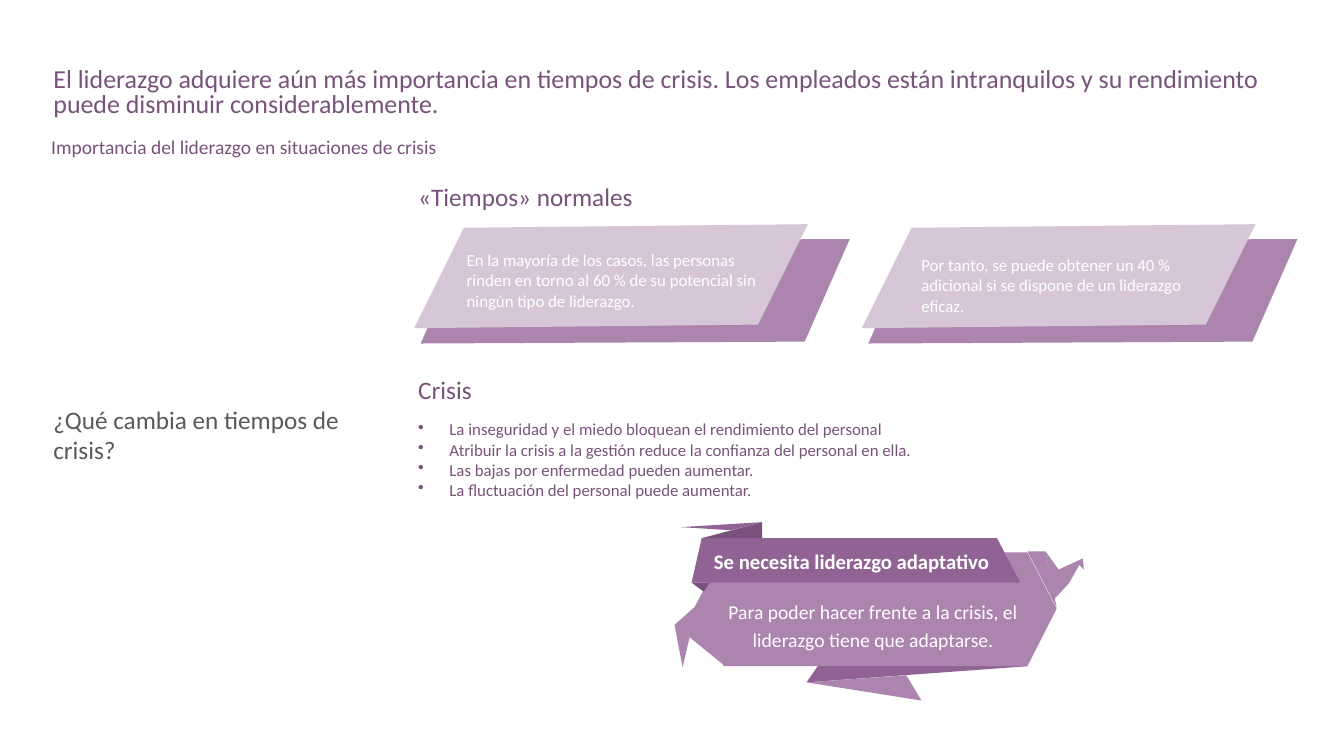
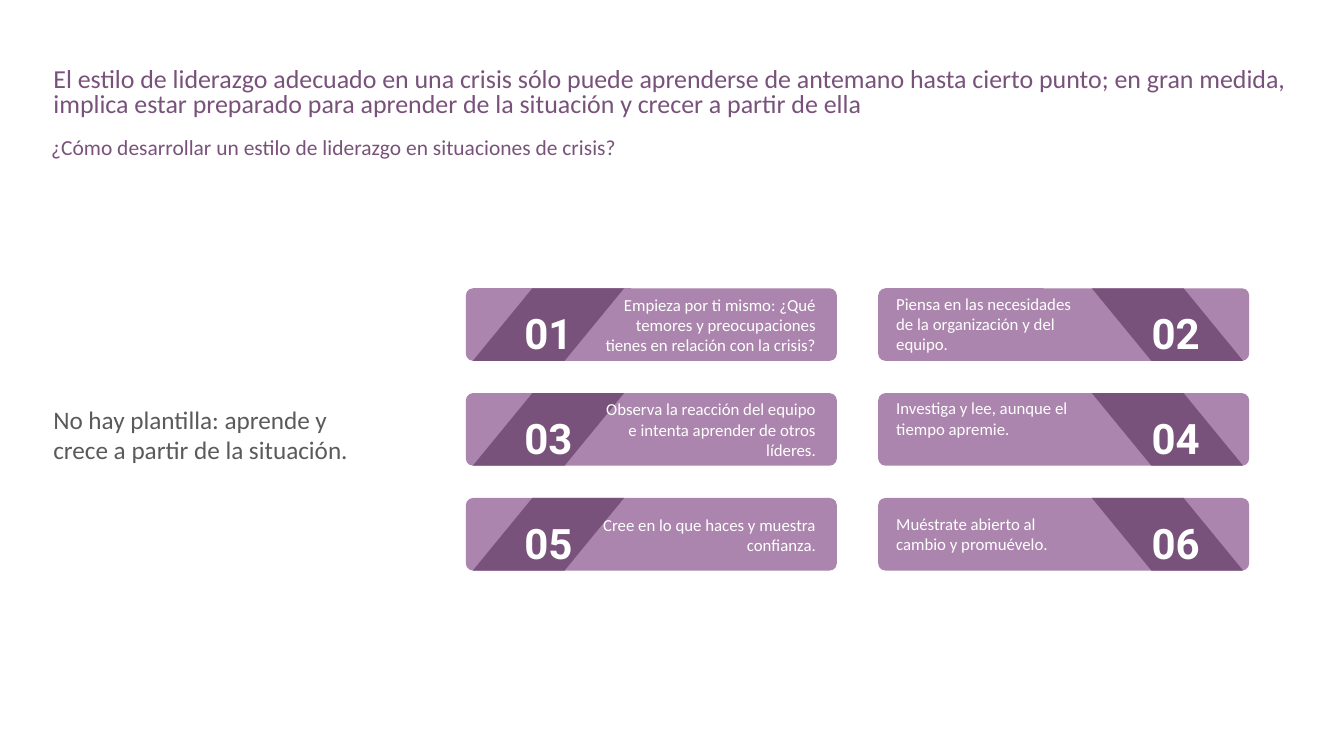
from dataclasses import dataclass

from lxml import etree
from pptx import Presentation
from pptx.dml.color import RGBColor
from pptx.enum import shapes, text
from pptx.oxml import ns
from pptx.util import Inches, Pt


@dataclass(frozen=True)
class Theme:
    """Colours, fonts and type sizes of the deck."""
    dark: str = "79527B"
    deep: str = "916395"
    mid: str = "AB85AD"
    pale: str = "D7C6D8"
    grey: str = "595A59"
    white: str = "FFFFFF"
    font: str = "Calibri"
    number_font: str = "Roboto"
    title: float = 18.5
    heading: float = 18
    banner: float = 14.8
    message: float = 14
    body: float = 12
    number: float = 30


T = Theme()
LEFT, CENTER, RIGHT = text.PP_ALIGN.LEFT, text.PP_ALIGN.CENTER, text.PP_ALIGN.RIGHT
TOP, MIDDLE = text.MSO_ANCHOR.TOP, text.MSO_ANCHOR.MIDDLE
PARALLELOGRAM = shapes.MSO_SHAPE.PARALLELOGRAM
ROUNDED = shapes.MSO_SHAPE.ROUNDED_RECTANGLE

RIBBON = [
    (T.mid, [(2.3, 1.52), (2.45, 1.77), (1.31, 1.59)]),
    (T.deep, [(3.5, 1.43), (1.42, 1.43), (1.31, 1.59)]),
    (T.mid, [(0.49, 1.43), (0.19, 0.86), (0.49, 0.3), (3.5, 0.3), (3.79, 0.86), (3.5, 1.43)]),
    (T.mid, [(3.79, 0.85), (3.5, 0.29), (3.68, 0.29)]),
    (T.mid, [(3.77, 0.76), (3.91, 0.61), (3.68, 0.29)]),
    (T.mid, [(3.91, 0.61), (4.05, 0.36), (3.81, 0.47)]),
    (T.mid, [(4.05, 0.36), (4.06, 0.47), (4.01, 0.42)]),
    (T.mid, [(0.19, 0.85), (0.49, 1.42), (0, 1.02)]),
    (T.mid, [(0, 1.02), (0.08, 1.44), (0.15, 1.14)]),
    (T.deep, [(3.43, 0.6), (0.17, 0.6), (0.27, 0.16), (3.2, 0.16)]),
    (T.dark, [(0.17, 0.6), (0.29, 0.69), (0.35, 0.6)]),
    (T.dark, [(0.87, 0.16), (0.87, 0), (0.27, 0.16)]),
    (T.deep, [(0.87, 0), (0.06, 0.05), (0.56, 0.08)]),
]


def add_run(p, words, size, color, font=T.font, bold=False):
    """Add one formatted run to a paragraph."""
    r = p.add_run()
    r.text = words
    r.font.size, r.font.name, r.font.bold = Pt(size), font, bold
    r.font.color.rgb = RGBColor.from_string(color)


def add_text(parent, box, words, size, color, align=LEFT, spacing=None,
             anchor=TOP, inset=True, **style):
    """Add a wrapped text box and return its text frame."""
    tf = parent.add_textbox(*map(Inches, box)).text_frame
    tf.word_wrap, tf.vertical_anchor = True, anchor
    if not inset:
        tf.margin_left = tf.margin_right = tf.margin_top = tf.margin_bottom = 0
    p = tf.paragraphs[0]
    p.alignment, p.line_spacing = align, spacing
    add_run(p, words, size, color, **style)
    return tf


def paint(sp, color):
    """Give a shape a flat fill without line or shadow."""
    sp.shadow.inherit = False
    sp.fill.solid()
    sp.fill.fore_color.rgb = RGBColor.from_string(color)
    sp.line.fill.background()


def add_shape(parent, kind, box, color, adjust, rotation=0, flip=False):
    """Add a flat preset shape."""
    sp = parent.add_shape(kind, *map(Inches, box))
    paint(sp, color)
    sp.adjustments[0] = adjust
    sp.rotation = rotation
    if flip:
        sp._element.spPr.xfrm.set("flipH", "1")


def add_bullet(tf, words):
    """Append a bulleted paragraph to a text frame."""
    p = tf.add_paragraph()
    pPr = p._p.get_or_add_pPr()
    pPr.set("marL", str(Inches(0.31)))
    pPr.set("indent", str(Inches(-0.31)))
    color = etree.SubElement(pPr, ns.qn("a:buClr"))
    etree.SubElement(color, ns.qn("a:srgbClr")).set("val", T.dark)
    etree.SubElement(pPr, ns.qn("a:buChar")).set("char", "•")
    add_run(p, words, T.body, T.dark)
    return p


def add_base(prs, title, subtitle, subtitle_size, aside):
    """Add a slide with its title, subtitle and left-hand statement."""
    s = prs.slides.add_slide(prs.slide_layouts[5])
    sp = s.shapes.title
    sp.left, sp.top, sp.width, sp.height = map(Inches, (0.43, 0.63, 12.54, 0.64))
    tf = sp.text_frame
    tf.word_wrap, tf.vertical_anchor = True, TOP
    tf.auto_size = text.MSO_AUTO_SIZE.NONE
    p = tf.paragraphs[0]
    p.alignment, p.line_spacing = LEFT, 0.8
    add_run(p, title, T.title, T.dark)
    add_text(s.shapes, (0.41, 1.35, 12.56, 0.28), subtitle, subtitle_size, T.dark, spacing=0.7)
    add_text(s.shapes, (0.43, 1.79, 3.49, 5.04), aside, T.heading, T.grey, anchor=MIDDLE)
    return s


def add_slanted_card(parent, x, y, words, dx, dy):
    """Add two stacked slanted panels with a statement on top."""
    for left, top, height, color, turn in ((0.86, -1.07, 3.48, T.mid, 293.7),
                                           (0.62, -1.0, 3.04, T.pale, 296.4)):
        add_shape(parent, PARALLELOGRAM, (x + left, y + top, 2.66, height), color,
                  0.582, turn, flip=True)
    add_text(parent, (x + dx, y + dy, 3.14, 0.71), words, T.body, T.white)


def add_ribbon(parent, x, y, heading, message):
    """Add the folded ribbon with its heading and message."""
    ribbon = parent.add_group_shape().shapes
    for color, points in RIBBON:
        corners = [(Inches(x + px), Inches(y + py)) for px, py in points]
        outline = ribbon.build_freeform(*corners[0])
        outline.add_line_segments(corners[1:], close=True)
        paint(outline.convert_to_shape(), color)
    add_text(ribbon, (x, y + 0.21, 3.51, 0.35), heading, T.banner, T.white, CENTER, bold=True)
    add_text(ribbon, (x + 0.42, y + 0.68, 3.1, 0.57), message, T.message, T.white, CENTER, 1.19)


def add_numbered_card(parent, x, y, number, words, dy, mirrored):
    """Add a rounded card with a slanted band, a number and a tip."""
    if mirrored:
        band_x, number_x, text_x, text_w, align = 2.12, 2.69, 0.08, 2.09, LEFT
    else:
        band_x, number_x, text_x, text_w, align = 0.07, 0.56, 1.25, 2.32, RIGHT
    add_shape(parent, ROUNDED, (x, y, 3.68, 0.72), T.mid, 0.1)
    add_shape(parent, PARALLELOGRAM, (x + band_x, y, 1.5, 0.72), T.dark, 0.82, flip=mirrored)
    add_text(parent, (x + number_x, y + 0.19, 0.52, 0.51), f"{number:02}", T.number, T.white,
             CENTER, anchor=MIDDLE, inset=False, font=T.number_font, bold=True)
    add_text(parent, (x + text_x, y + dy, text_w, 0.71), words, T.body, T.white, align)


def build_importance(prs):
    """Build the slide on why leadership matters in a crisis."""
    s = add_base(
        prs,
        "El liderazgo adquiere aún más importancia en tiempos de crisis. Los empleados están "
        "intranquilos y su rendimiento puede disminuir considerablemente.",
        "Importancia del liderazgo en situaciones de crisis", 13.9,
        "¿Qué cambia en tiempos de crisis?")
    add_slanted_card(s.shapes, 8.55, 2.22, "Por tanto, se puede obtener un 40 % adicional si se "
                     "dispone de un liderazgo eficaz.", 0.49, 0.26)
    add_slanted_card(s.shapes, 4.11, 2.22, "En la mayoría de los casos, las personas rinden en "
                     "torno al 60 % de su potencial sin ningún tipo de liderazgo.", 0.42, 0.21)
    add_text(s.shapes, (4.05, 1.78, 2.87, 1.05), "«Tiempos» normales", T.heading, T.dark,
             spacing=0.9)
    tf = add_text(s.shapes, (4.05, 3.7, 8.16, 2.29), "Crisis", T.heading, T.dark, spacing=0.9)
    effects = [
        "La inseguridad y el miedo bloquean el rendimiento del personal",
        "Atribuir la crisis a la gestión reduce la confianza del personal en ella.",
        "Las bajas por enfermedad pueden aumentar.",
        "La fluctuación del personal puede aumentar.",
    ]
    bullets = [add_bullet(tf, words) for words in effects]
    bullets[0].space_before = Pt(10)
    add_ribbon(s.shapes, 6.69, 5.18, "Se necesita liderazgo adaptativo",
               "Para poder hacer frente a la crisis, el liderazgo tiene que adaptarse.")


def build_tips(prs):
    """Build the slide with the six numbered tips."""
    s = add_base(
        prs,
        "El estilo de liderazgo adecuado en una crisis sólo puede aprenderse de antemano hasta "
        "cierto punto; en gran medida, implica estar preparado para aprender de la situación y "
        "crecer a partir de ella",
        "¿Cómo desarrollar un estilo de liderazgo en situaciones de crisis?", 15.3,
        "No hay plantilla: aprende y crece a partir de la situación.")
    tips = [
        ("Empieza por ti mismo: ¿Qué temores y preocupaciones tienes en relación con la crisis?",
         0.01),
        ("Piensa en las necesidades de la organización y del equipo.", 0),
        ("Observa la reacción del equipo e intenta aprender de otros líderes.", 0.01),
        ("Investiga y lee, aunque el tiempo apremie.", 0),
        ("Cree en lo que haces y muestra confianza.", 0.12),
        ("Muéstrate abierto al cambio y promuévelo.", 0.11),
    ]
    for i, (words, dy) in enumerate(tips):
        row, col = divmod(i, 2)
        add_numbered_card(s.shapes, 4.62 + 4.09 * col, 2.86 + 1.04 * row, i + 1, words, dy,
                          mirrored=col == 1)


def main():
    """Build and save the deck."""
    prs = Presentation()
    prs.slide_width, prs.slide_height = Inches(13.33), Inches(7.5)
    build_importance(prs)
    build_tips(prs)
    prs.save("out.pptx")


if __name__ == "__main__":
    main()
